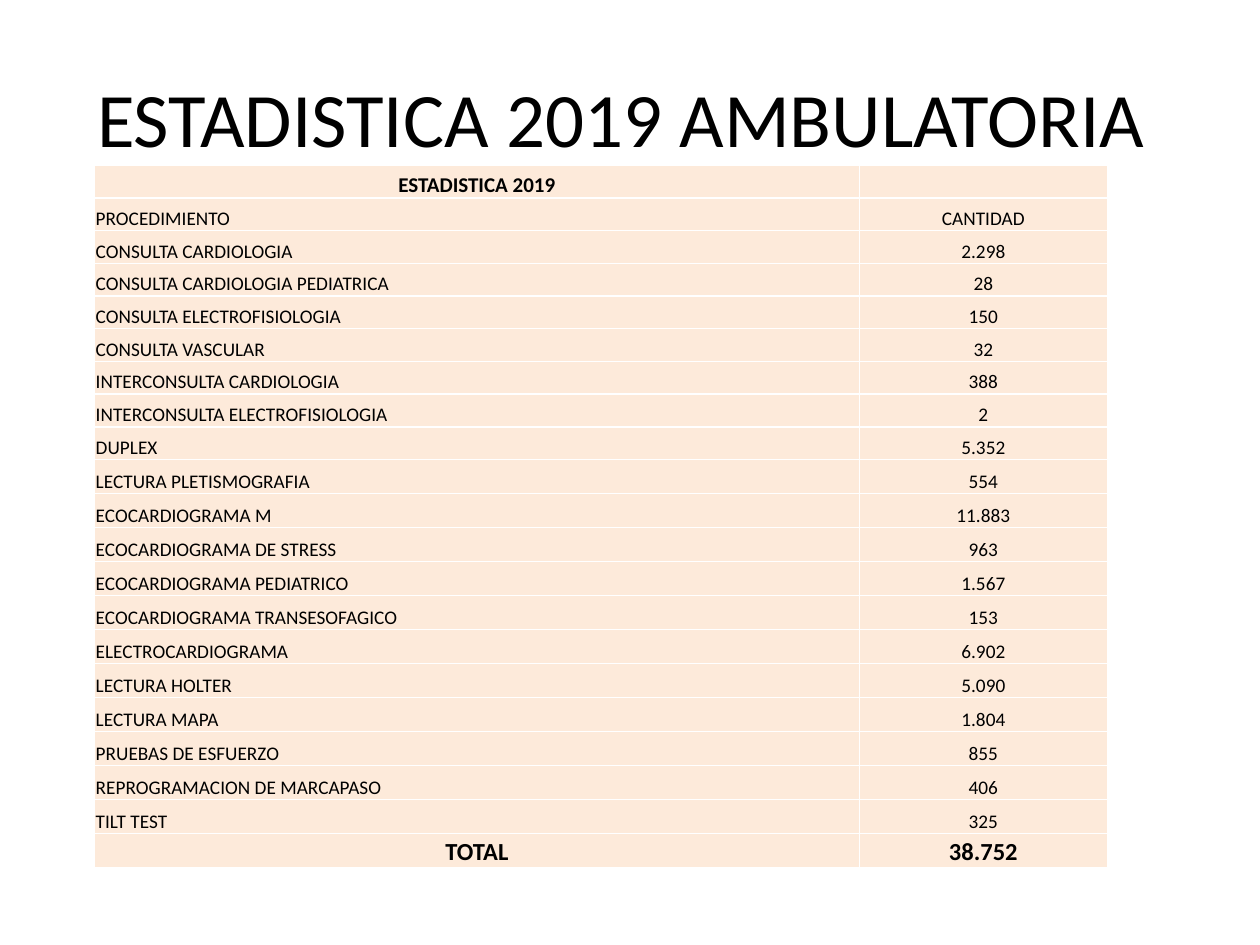
from typing import NamedTuple

import pptx
import pptx.dml.color
import pptx.enum.text
import pptx.oxml
import pptx.oxml.ns
import pptx.util

RGBColor = pptx.dml.color.RGBColor
Inches = pptx.util.Inches
Pt = pptx.util.Pt
Align = pptx.enum.text.PP_ALIGN
Anchor = pptx.enum.text.MSO_ANCHOR

BLACK = RGBColor(0x00, 0x00, 0x00)
WHITE = RGBColor(0xFF, 0xFF, 0xFF)
PEACH = RGBColor(0xFD, 0xEA, 0xDA)
FONT = "Calibri"

SLIDE_WIDTH, SLIDE_HEIGHT = 10, 7.5
TABLE_LEFT, TABLE_TOP = 0.75, 1.31
COLUMN_WIDTHS = (6.07, 1.97)
SHORT_ROW, TALL_ROW = 0.26, 0.27
SHORT_ROW_COUNT = 9
CELL_INSET = 0.01


class Row(NamedTuple):
    label: str
    amount: str
    size: int = 11
    bold: bool = False
    label_align: Align = Align.LEFT


ROWS = (
    Row("ESTADISTICA 2019", "", 12, True, Align.CENTER),
    Row("PROCEDIMIENTO", "CANTIDAD"),
    Row("CONSULTA CARDIOLOGIA", "2.298"),
    Row("CONSULTA CARDIOLOGIA PEDIATRICA", "28"),
    Row("CONSULTA ELECTROFISIOLOGIA", "150"),
    Row("CONSULTA VASCULAR", "32"),
    Row("INTERCONSULTA CARDIOLOGIA", "388"),
    Row("INTERCONSULTA ELECTROFISIOLOGIA", "2"),
    Row("DUPLEX", "5.352"),
    Row("LECTURA PLETISMOGRAFIA", "554"),
    Row("ECOCARDIOGRAMA M", "11.883"),
    Row("ECOCARDIOGRAMA DE STRESS", "963"),
    Row("ECOCARDIOGRAMA PEDIATRICO", "1.567"),
    Row("ECOCARDIOGRAMA TRANSESOFAGICO", "153"),
    Row("ELECTROCARDIOGRAMA", "6.902"),
    Row("LECTURA HOLTER", "5.090"),
    Row("LECTURA MAPA", "1.804"),
    Row("PRUEBAS DE ESFUERZO", "855"),
    Row("REPROGRAMACION DE MARCAPASO", "406"),
    Row("TILT TEST", "325"),
    Row("TOTAL", "38.752", 14, True, Align.CENTER),
)


def write_text(text_frame, text: str, *, size: int, bold: bool = False, align=Align.CENTER) -> None:
    paragraph = text_frame.paragraphs[0]
    paragraph.alignment = align
    if not text:
        ending = pptx.oxml.parse_xml(
            f'<a:endParaRPr {pptx.oxml.ns.nsdecls("a")} sz="{size * 100}"/>'
        )
        paragraph._p.append(ending)
        return
    run = paragraph.add_run()
    run.text = text
    run.font.name = FONT
    run.font.size = Pt(size)
    run.font.bold = bold
    run.font.color.rgb = BLACK


def add_borders(cell, color: RGBColor, width: float) -> None:
    properties = cell._tc.get_or_add_tcPr()
    for position, side in enumerate(("lnL", "lnR", "lnT", "lnB")):
        border = pptx.oxml.parse_xml(
            f'<a:{side} {pptx.oxml.ns.nsdecls("a")} w="{Pt(width)}">'
            f'<a:solidFill><a:srgbClr val="{color}"/></a:solidFill></a:{side}>'
        )
        properties.insert(position, border)


def format_cell(cell) -> None:
    cell.fill.solid()
    cell.fill.fore_color.rgb = PEACH
    cell.vertical_anchor = Anchor.BOTTOM
    cell.margin_left = cell.margin_right = cell.margin_top = Inches(CELL_INSET)
    cell.margin_bottom = 0
    add_borders(cell, WHITE, 1)


def add_title(slide) -> None:
    box = slide.shapes.add_textbox(
        Inches(SLIDE_WIDTH * 0.05), Inches(SLIDE_HEIGHT * 0.04),
        Inches(SLIDE_WIDTH * 0.9), Inches(SLIDE_HEIGHT / 6),
    )
    box.text_frame.word_wrap = True
    box.text_frame.vertical_anchor = Anchor.MIDDLE
    write_text(box.text_frame, "ESTADISTICA 2019 AMBULATORIA ", size=44)


def add_statistics_table(slide) -> None:
    heights = [SHORT_ROW if index < SHORT_ROW_COUNT else TALL_ROW for index in range(len(ROWS))]
    table = slide.shapes.add_table(
        len(ROWS), len(COLUMN_WIDTHS), Inches(TABLE_LEFT), Inches(TABLE_TOP),
        Inches(sum(COLUMN_WIDTHS)), Inches(sum(heights)),
    ).table
    table.first_row = table.horz_banding = False
    for column, width in zip(table.columns, COLUMN_WIDTHS):
        column.width = Inches(width)
    for table_row, height, row in zip(table.rows, heights, ROWS):
        table_row.height = Inches(height)
        contents = ((row.label, row.label_align), (row.amount, Align.CENTER))
        for cell, (text, align) in zip(table_row.cells, contents):
            format_cell(cell)
            write_text(cell.text_frame, text, size=row.size, bold=row.bold, align=align)


def main() -> None:
    presentation = pptx.Presentation()
    presentation.slide_width = Inches(SLIDE_WIDTH)
    presentation.slide_height = Inches(SLIDE_HEIGHT)
    slide = presentation.slides.add_slide(presentation.slide_layouts[6])
    add_title(slide)
    add_statistics_table(slide)
    presentation.save("out.pptx")


if __name__ == "__main__":
    main()
